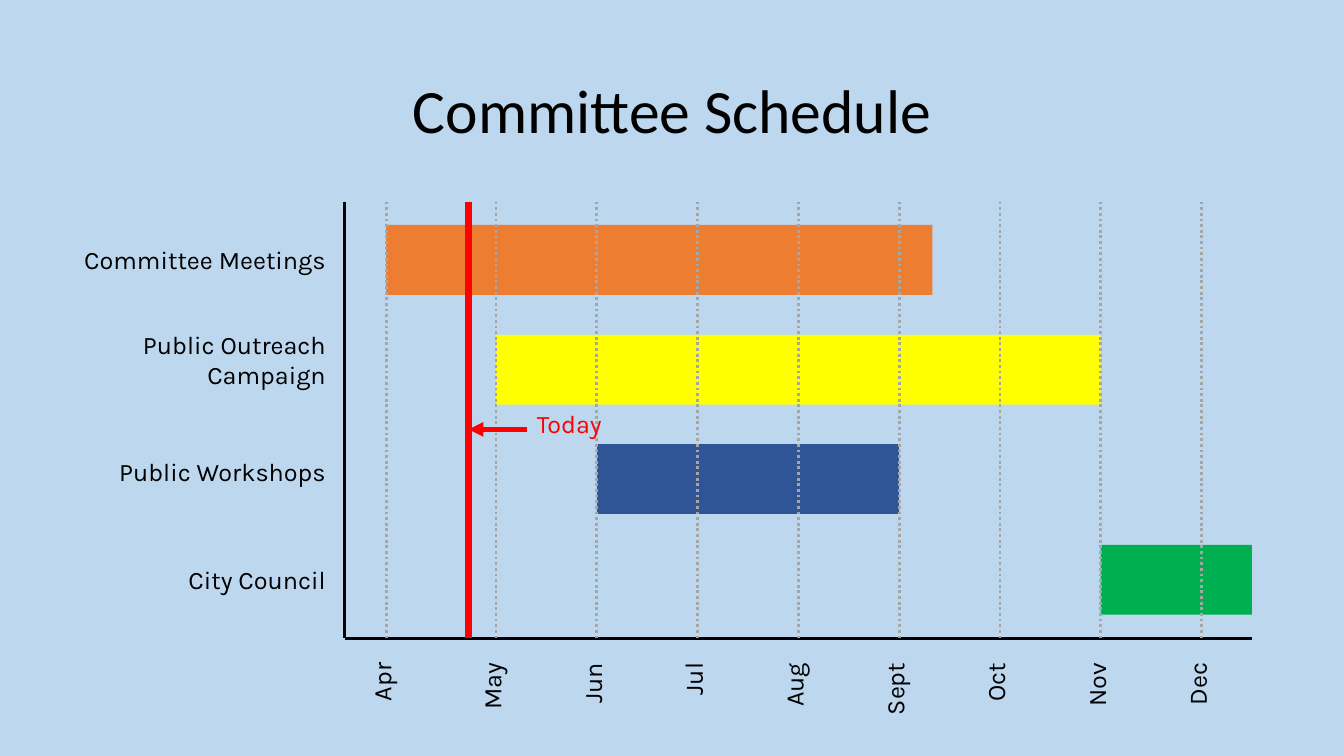
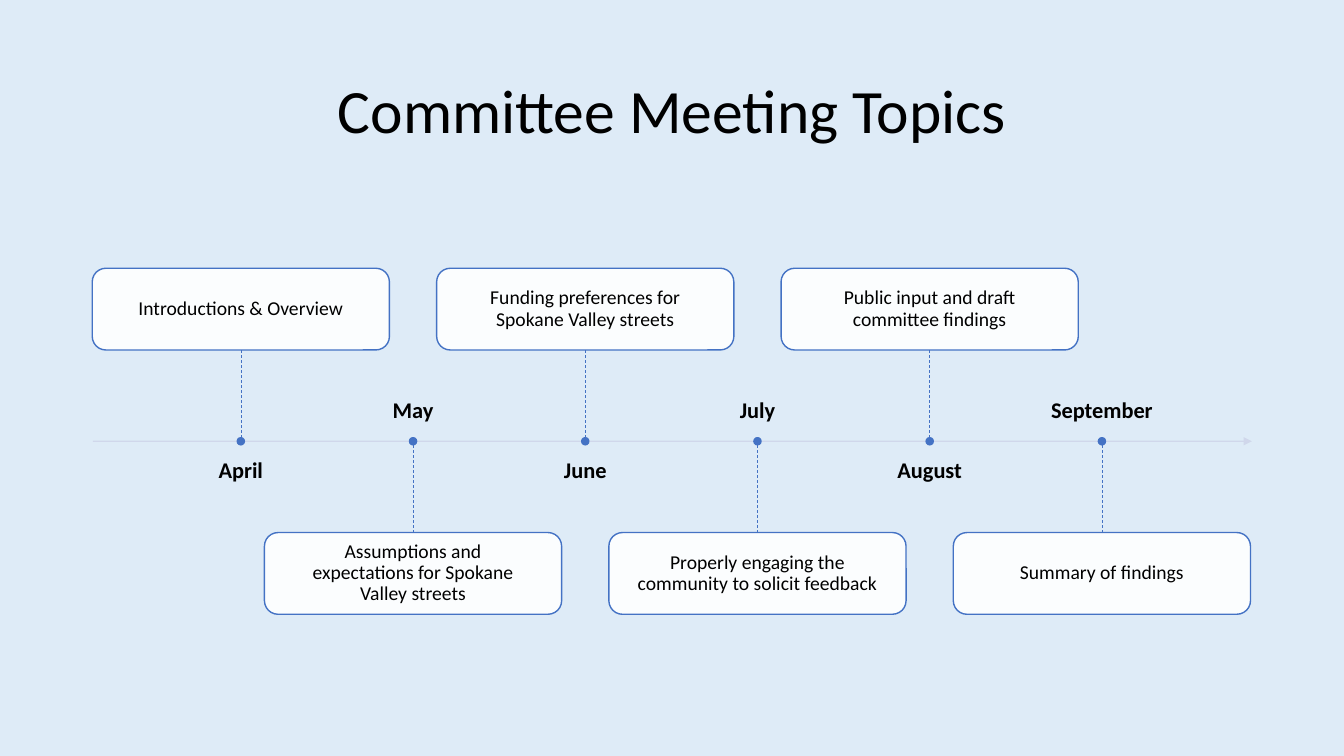
import dataclasses

import lxml.etree
import pptx
import pptx.dml.color
import pptx.enum.dml
import pptx.enum.shapes
import pptx.enum.text
import pptx.oxml.ns
import pptx.util

Cm = pptx.util.Cm
Pt = pptx.util.Pt
qn = pptx.oxml.ns.qn
ALIGN = pptx.enum.text.PP_ALIGN
ANCHOR = pptx.enum.text.MSO_ANCHOR
DASH = pptx.enum.dml.MSO_LINE
SHAPE = pptx.enum.shapes.MSO_SHAPE


@dataclasses.dataclass(frozen=True)
class Theme:
    """Colours, fonts and type sizes used by every slide."""
    schedule_bg: str = "BDD7EE"
    topics_bg: str = "DEEBF7"
    ink: str = "000000"
    card: str = "FFFFFF"
    accent: str = "4472C4"
    arrow: str = "CFD5EA"
    grid: str = "A6A6A6"
    today: str = "FF0000"
    orange: str = "ED7D31"
    yellow: str = "FFFF00"
    navy: str = "2F5597"
    green: str = "00B050"
    font: str = "Calibri"
    chart_font: str = "Karla"
    title_size: int = 44
    label_size: int = 18
    month_size: int = 16
    card_size: int = 14


THEME = Theme()

AXIS_LEFT, AXIS_RIGHT, AXIS_TOP, AXIS_BOTTOM = 8.69, 31.55, 5.08, 16.08
APRIL_X, MAY_X, MONTH_STEP = 9.73, 12.5, 2.54
BAR_HEIGHT = 1.76
TODAY_X, TODAY_ARROW_Y = 11.81, 10.82
MONTHS = ["Apr", "May", "Jun", "Jul", "Aug", "Sept", "Oct", "Nov", "Dec"]
TASKS = [
    ("Committee Meetings", 0, 5.33, 6.55, 6.55, THEME.orange),
    ("Public Outreach Campaign", 1, 7, 9.32, 9.05, THEME.yellow),
    ("Public Workshops", 2, 5, 12.07, 11.87, THEME.navy),
    ("City Council", 7, 8.5, 14.61, 14.61, THEME.green),
]

TIMELINE_Y, FIRST_TOPIC_X, TOPIC_STEP = 11.12, 6.07, 4.34
CARD_WIDTH, CARD_HEIGHT, STEM = 7.49, 2.06, 2.3
LABEL_WIDTH, LABEL_HEIGHT, LABEL_GAP = 6.58, 1.37, 0.44
DOT = 0.18
TOPICS = [
    ("April", "Introductions & Overview"),
    ("May", "Assumptions and expectations for Spokane Valley streets"),
    ("June", "Funding preferences for Spokane Valley streets"),
    ("July", "Properly engaging the community to solicit feedback"),
    ("August", "Public input and draft committee findings"),
    ("September", "Summary of findings"),
]


def rgb(value):
    """Return the colour for a hex value."""
    return pptx.dml.color.RGBColor.from_string(value)


def set_text(sp, text, size, font=THEME.font, color=THEME.ink, bold=False,
             align=ALIGN.CENTER, anchor=ANCHOR.MIDDLE, spacing=None, inset=(0.25, 0.13)):
    """Write one formatted paragraph into a shape."""
    tf = sp.text_frame
    tf.text = text
    tf.word_wrap = True
    tf.auto_size = pptx.enum.text.MSO_AUTO_SIZE.NONE
    tf.vertical_anchor = anchor
    tf.margin_left = tf.margin_right = Cm(inset[0])
    tf.margin_top = tf.margin_bottom = Cm(inset[1])
    p = tf.paragraphs[0]
    p.alignment = align
    p.line_spacing = spacing
    r = p.runs[0]
    r.font.name = font
    r.font.size = Pt(size)
    r.font.bold = bold
    r.font.color.rgb = rgb(color)


def set_alpha(sp, percent):
    """Make the first colour of a shape partly transparent."""
    color = next(sp._element.spPr.iter(qn("a:srgbClr")))
    lxml.etree.SubElement(color, qn("a:alpha")).set("val", str(percent * 1000))


def add_title_slide(prs, title, background):
    """Add a title-only slide with the shared title style."""
    s = prs.slides.add_slide(prs.slide_layouts[5])
    s.background.fill.solid()
    s.background.fill.fore_color.rgb = rgb(background)
    sp = s.shapes.title
    sp.left, sp.top, sp.width, sp.height = Cm(2.34), Cm(1.02), Cm(29.21), Cm(3.68)
    set_text(sp, title, THEME.title_size, spacing=0.9)
    return s


def add_label(s, x, y, w, h, text, size, **style):
    """Add a text box."""
    sp = s.shapes.add_textbox(Cm(x), Cm(y), Cm(w), Cm(h))
    set_text(sp, text, size, **style)
    return sp


def add_box(s, kind, x, y, w, h, fill, line=None):
    """Add a filled preset shape with an optional outline."""
    sp = s.shapes.add_shape(kind, Cm(x), Cm(y), Cm(w), Cm(h))
    sp.shadow.inherit = False
    sp.fill.solid()
    sp.fill.fore_color.rgb = rgb(fill)
    if line:
        sp.line.color.rgb = rgb(line)
        sp.line.width = Pt(1)
    else:
        sp.line.fill.background()
    return sp


def add_line(s, x1, y1, x2, y2, color, width, dash=None, arrow=False):
    """Add a straight line, dashed or ending in an arrowhead on request."""
    sp = s.shapes.add_connector(pptx.enum.shapes.MSO_CONNECTOR.STRAIGHT,
                                Cm(x1), Cm(y1), Cm(x2), Cm(y2))
    sp.line.color.rgb = rgb(color)
    sp.line.width = Pt(width)
    if dash:
        sp.line.dash_style = dash
    spPr = sp._element.spPr
    if arrow:
        ln = spPr.find(qn("a:ln"))
        lxml.etree.SubElement(ln, qn("a:tailEnd")).set("type", "triangle")
    lxml.etree.SubElement(spPr, qn("a:effectLst"))
    return sp


def month_x(index):
    """Return the horizontal place of a month counted from April."""
    return MAY_X + (index - 1) * MONTH_STEP if index >= 1 else APRIL_X


def add_task(s, name, start, end, bar_y, label_y, color):
    """Add the bar and the row label of one task."""
    x = month_x(start)
    add_box(s, SHAPE.RECTANGLE, x, bar_y - BAR_HEIGHT / 2, month_x(end) - x, BAR_HEIGHT, color)
    add_label(s, 0.64, label_y - 1, 7.82, 2, name, THEME.label_size,
              font=THEME.chart_font, align=ALIGN.RIGHT)


def add_month(s, index, name):
    """Add the dotted grid line and the upright name of one month."""
    x = month_x(index)
    add_line(s, x, AXIS_TOP, x, AXIS_BOTTOM, THEME.grid, 2, DASH.ROUND_DOT)
    w, h = 2.26, 1
    sp = add_label(s, x - 0.12 - w / 2, 17.58 - h / 2, w, h, name, THEME.label_size,
                   font=THEME.chart_font, align=ALIGN.RIGHT)
    sp.rotation = 270


def add_today(s):
    """Add the name and the arrow of the marker for today."""
    add_label(s, 13.28, 10.16, 2.74, 1.27, "Today", THEME.label_size, font=THEME.chart_font,
              color=THEME.today, align=ALIGN.LEFT, anchor=ANCHOR.TOP)
    add_line(s, 13.28, TODAY_ARROW_Y, TODAY_X, TODAY_ARROW_Y, THEME.today, 3.5, arrow=True)


def add_topic(s, index, month, topic):
    """Add a dated topic, with its card above or below the timeline in turn."""
    x = FIRST_TOPIC_X + index * TOPIC_STEP
    above = index % 2 == 0
    stem_end = TIMELINE_Y - STEM if above else TIMELINE_Y + STEM
    card_y = stem_end - CARD_HEIGHT if above else stem_end
    label_y = TIMELINE_Y + LABEL_GAP if above else TIMELINE_Y - LABEL_GAP - LABEL_HEIGHT
    add_label(s, x - LABEL_WIDTH / 2, label_y, LABEL_WIDTH, LABEL_HEIGHT, month,
              THEME.month_size, bold=True, spacing=0.9, inset=(0, 0),
              anchor=ANCHOR.TOP if above else ANCHOR.BOTTOM)
    card = add_box(s, SHAPE.ROUNDED_RECTANGLE, x - CARD_WIDTH / 2, card_y,
                   CARD_WIDTH, CARD_HEIGHT, THEME.card, THEME.accent)
    set_alpha(card, 90)
    set_text(card, topic, THEME.card_size, spacing=0.9, inset=(0.6, 0.4))
    add_line(s, x, stem_end, x, TIMELINE_Y, THEME.accent, 0.5, DASH.DASH)
    add_box(s, SHAPE.OVAL, x - DOT / 2, TIMELINE_Y - DOT / 2, DOT, DOT,
            THEME.accent, THEME.accent)


def build_schedule(prs):
    """Build the slide with the committee schedule."""
    s = add_title_slide(prs, "Committee Schedule", THEME.schedule_bg)
    for task in TASKS:
        add_task(s, *task)
    add_line(s, AXIS_LEFT, AXIS_TOP, AXIS_LEFT, AXIS_BOTTOM, THEME.ink, 2)
    add_line(s, AXIS_LEFT, AXIS_BOTTOM, AXIS_RIGHT, AXIS_BOTTOM, THEME.ink, 2)
    add_line(s, TODAY_X, AXIS_TOP, TODAY_X, AXIS_BOTTOM, THEME.today, 5)
    for index, name in enumerate(MONTHS):
        add_month(s, index, name)
    add_today(s)


def build_topics(prs):
    """Build the slide with the timeline of meeting topics."""
    s = add_title_slide(prs, "Committee Meeting Topics", THEME.topics_bg)
    axis = add_line(s, 2.34, TIMELINE_Y, 31.55, TIMELINE_Y, THEME.arrow, 1, arrow=True)
    set_alpha(axis, 90)
    for index, (month, topic) in enumerate(TOPICS):
        add_topic(s, index, month, topic)


def main():
    """Build and save the presentation."""
    prs = pptx.Presentation()
    prs.slide_width, prs.slide_height = Cm(33.87), Cm(19.05)
    build_schedule(prs)
    build_topics(prs)
    prs.save("out.pptx")


if __name__ == "__main__":
    main()
